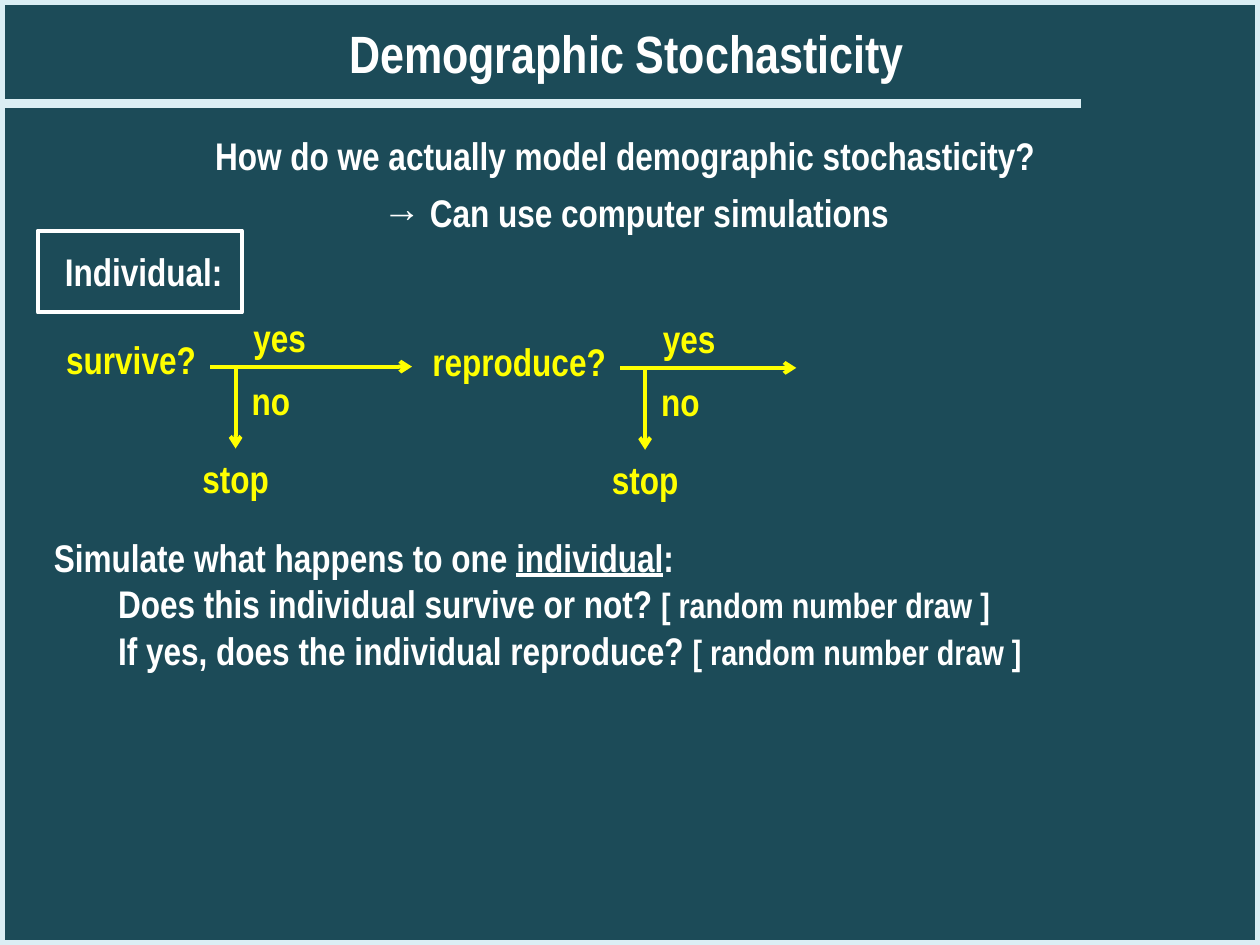
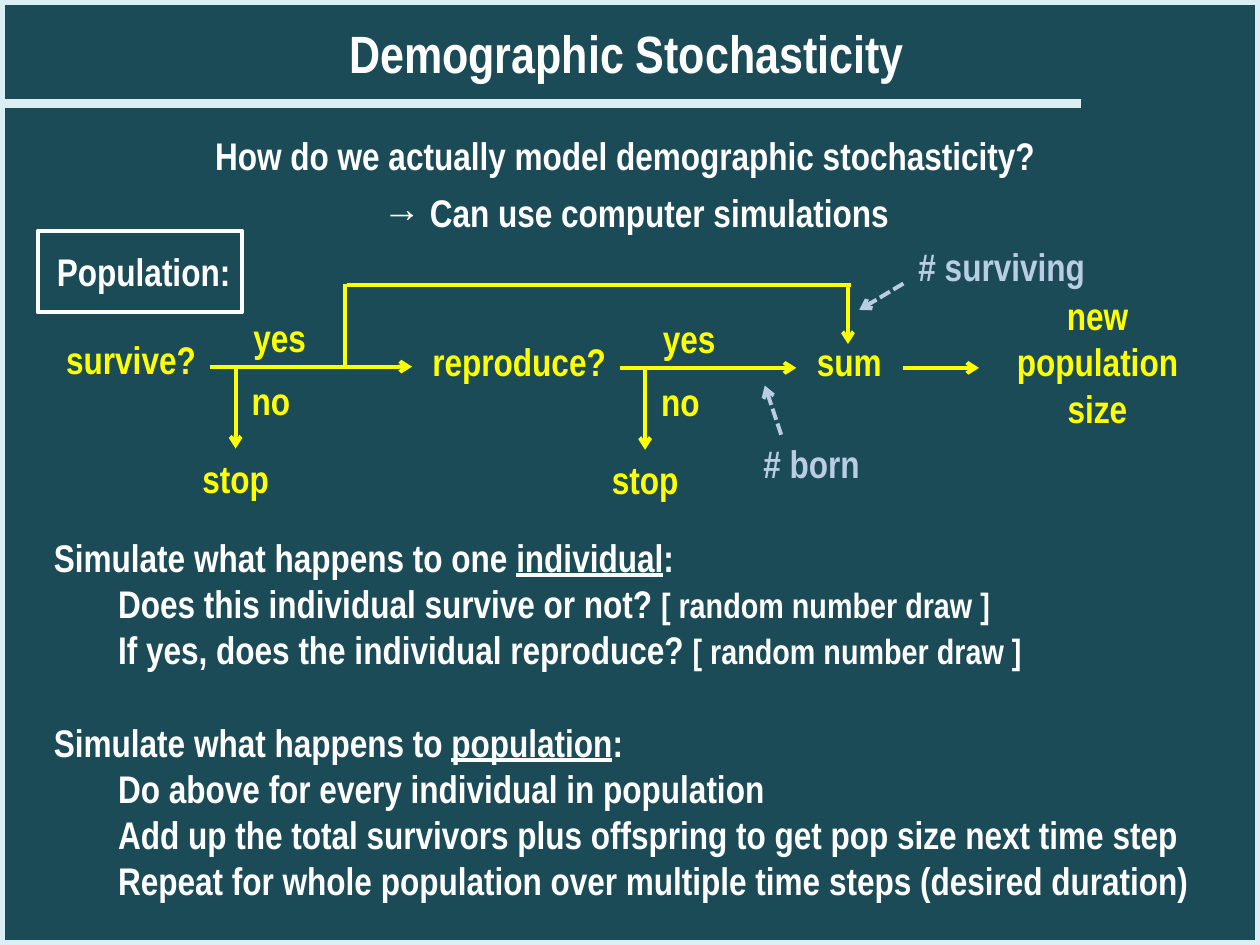
from pptx import Presentation
from pptx.dml.color import RGBColor
from pptx.enum.dml import MSO_LINE
from pptx.enum.shapes import MSO_CONNECTOR, MSO_SHAPE
from pptx.enum.text import MSO_ANCHOR, MSO_AUTO_SIZE, PP_ALIGN
from pptx.oxml.ns import qn
from pptx.util import Inches, Pt
from lxml.etree import SubElement

COLORS = {
    "background": "1C4B58",
    "frame": "DBEEF4",
    "text": "FFFFFF",
    "flow": "FFFF00",
    "note": "B9CDE5",
}
RGB = {role: RGBColor.from_string(value) for role, value in COLORS.items()}
FONT = "Arial Narrow"
LINE_WIDTH = 2.25

DRAW = "[ random number draw ]"
INDIVIDUAL_LINES = [
    (0, ["Simulate what happens to one ", "individual", ":"]),
    (1, ["Does this individual survive or not? ", DRAW]),
    (1, ["If yes, does the individual reproduce? ", DRAW]),
]
POPULATION_LINES = [
    (0, ["Simulate what happens to ", "population", ":"]),
    (1, ["Do above for every individual in population"]),
    (1, ["Add up the total survivors plus offspring to get pop size next time step"]),
    (1, ["Repeat for whole population over multiple time steps (desired duration)"]),
]
SCOPES = [
    ("Individual:", INDIVIDUAL_LINES, 1.58),
    ("Population:", INDIVIDUAL_LINES + POPULATION_LINES, 3.06),
]
STEPS = [
    ("survive?", 0.25, 1.67, 3.27, 2.91),
    ("reproduce?", 3.33, 4.92, 6.32, 2.92),
]


def add_text(slide, lines, left, top, width, height, role="text", size=22, align=PP_ALIGN.CENTER):
    box = slide.shapes.add_textbox(Inches(left), Inches(top), Inches(width), Inches(height))
    frame = box.text_frame
    frame.word_wrap = True
    frame.auto_size = MSO_AUTO_SIZE.SHAPE_TO_FIT_TEXT
    for number, (level, pieces) in enumerate(lines):
        paragraph = frame.paragraphs[0] if number == 0 else frame.add_paragraph()
        paragraph.alignment = align
        if level:
            paragraph._p.get_or_add_pPr().set("marL", str(Inches(0.51)))
        elif number:
            paragraph.space_before = Pt(26.4)
        paragraph.font.name = FONT
        paragraph.font.size = Pt(size)
        paragraph.font.bold = True
        paragraph.font.color.rgb = RGB[role]
        for position, piece in enumerate(pieces):
            run = paragraph.add_run()
            run.text = piece
            if piece == DRAW:
                run.font.size = Pt(20)
            elif level == 0 and position == 1:
                run.font.underline = True
    return box


def add_line(slide, x1, y1, x2, y2, role="flow", width=LINE_WIDTH, arrow=True, dashed=False):
    line = slide.shapes.add_connector(
        MSO_CONNECTOR.STRAIGHT, Inches(x1), Inches(y1), Inches(x2), Inches(y2))
    line.line.color.rgb = RGB[role]
    line.line.width = Pt(width)
    if dashed:
        line.line.dash_style = MSO_LINE.SQUARE_DOT
    properties = line._element.spPr
    if arrow:
        SubElement(properties.find(qn("a:ln")), qn("a:tailEnd"), type="arrow")
    SubElement(properties, qn("a:effectLst"))
    return line


deck = Presentation()
deck.slide_width, deck.slide_height = Inches(10), Inches(7.5)

for scope, explanation, explanation_height in SCOPES:
    slide = deck.slides.add_slide(deck.slide_layouts[6])
    slide.background.fill.solid()
    slide.background.fill.fore_color.rgb = RGB["background"]

    add_line(slide, 0, 0.82, 8.58, 0.82, "frame", 5, arrow=False)
    border = slide.shapes.add_shape(MSO_SHAPE.RECTANGLE, 0, 0, deck.slide_width, deck.slide_height)
    scope_box = slide.shapes.add_shape(
        MSO_SHAPE.RECTANGLE, Inches(0.3), Inches(1.83), Inches(1.62), Inches(0.65))
    for outline, role, width in [(border, "frame", 6), (scope_box, "text", LINE_WIDTH)]:
        outline.shadow.inherit = False
        outline.fill.background()
        outline.line.color.rgb = RGB[role]
        outline.line.width = Pt(width)

    scope_frame = scope_box.text_frame
    scope_frame.margin_left, scope_frame.margin_right = Inches(0.06), 0
    scope_frame.vertical_anchor = MSO_ANCHOR.MIDDLE
    scope_name = scope_frame.paragraphs[0]
    scope_name.text = scope
    scope_name.alignment = PP_ALIGN.CENTER
    scope_name.font.name = FONT
    scope_name.font.size = Pt(22)
    scope_name.font.bold = True
    scope_name.font.color.rgb = RGB["text"]

    add_text(slide, [(0, ["Demographic Stochasticity"])], 0.74, 0.12, 8.47, 0.61, size=30)
    add_text(slide, [(0, ["How do we actually model demographic stochasticity?"])], 0.42, 1, 9.08, 0.47)
    add_text(slide, [(0, ["→ Can use computer simulations"])], 2.67, 1.45, 4.75, 0.47)

    for question, left, start, end, y in STEPS:
        add_text(slide, [(0, [question])], left, y - 0.29, 1.58, 0.47, "flow")
        add_line(slide, start, y, end, y)
        branch = start + 0.2
        add_text(slide, [(0, ["yes"])], start - 0.04, y - 0.47, 1.18, 0.47, "flow")
        add_text(slide, [(0, ["no"])], start - 0.11, y + 0.03, 1.18, 0.47, "flow")
        stop = add_text(slide, [(0, ["stop"])], branch - 0.59, y + 0.65, 1.18, 0.47, "flow")
        add_line(slide, branch, y, branch, y + 0.65).end_connect(stop, 0)

    add_text(slide, explanation, 0.33, 4.19, 9.5, explanation_height, align=PP_ALIGN.LEFT)

add_line(slide, 2.74, 2.25, 2.74, 2.9, arrow=False)
add_line(slide, 2.75, 2.26, 6.75, 2.26, arrow=False)
add_line(slide, 6.73, 2.28, 6.73, 2.73)
add_text(slide, [(0, ["sum"])], 5.95, 2.63, 1.58, 0.47, "flow")
add_line(slide, 7.17, 2.92, 7.77, 2.92)
add_text(slide, [(0, ["new population size"])], 7.92, 2.27, 1.58, 1.21, "flow")

add_line(slide, 7.17, 2.25, 6.82, 2.46, "note", dashed=True)
add_text(slide, [(0, ["# surviving"])], 7.11, 1.88, 1.68, 0.47, "note")
add_line(slide, 6.2, 3.45, 6.07, 3.06, "note", dashed=True)
add_text(slide, [(0, ["# born"])], 5.87, 3.44, 1.14, 0.47, "note")

deck.save("out.pptx")
